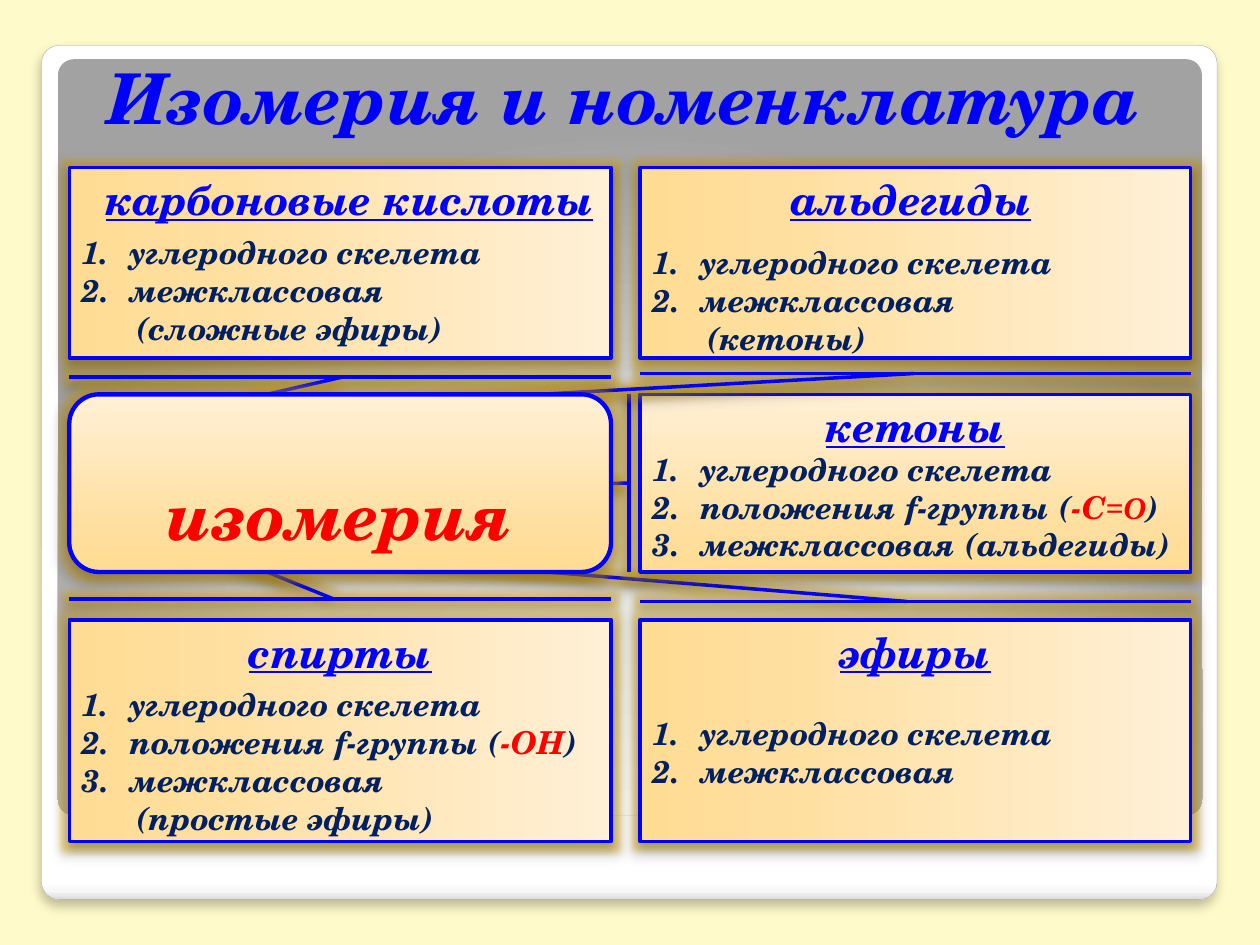
import pptx
import pptx.util
import pptx.dml.color
import pptx.enum.shapes
import pptx.enum.text
import pptx.oxml
import pptx.oxml.ns
import lxml.etree

COLORS = {"page": "FEFAC9", "blue": "0000FF", "navy": "002060", "red": "FF0000",
          "rim": "A4A4A4", "halo": "D8A000", "shade": "000000"}
CREAM = [(0, "FFDC94"), (25, "FFDF9F"), (100, "FFF0D6")]
WHITE = [(0, "FFFFFF"), (98, "FFFFFF"), (99, "F7F7F7"), (100, "DADADA")]
GREY = [(0, "FFFFFF"), (55, "E1E1E1"), (100, "A2A2A2")]
RADIAL = '<a:path path="circle"><a:fillToRect l="50000" t="175000" r="50000" b="-75000"/></a:path>'
FONT = "TeX Gyre Schola"
SHAPES = pptx.enum.shapes.MSO_SHAPE
CENTER = pptx.enum.text.PP_ALIGN.CENTER
MIDDLE = pptx.enum.text.MSO_ANCHOR.MIDDLE
BOTTOM = pptx.enum.text.MSO_ANCHOR.BOTTOM

LEFT, RIGHT = (0.55, 4.3), (5.08, 4.37)
TOP, CORE, BASE = (1.33, 1.51), (3.13, 1.41), (4.92, 1.76)
SKELETON = [("углеродного скелета", "navy")]
INTERCLASS = [("межклассовая", "navy")]

# column, row, turn, callout adjustments, heading, heading width, list top, items, closing line
CLASSES = [
    (LEFT, BASE, 90, (0.512, -0.094, 0.702, -0.283), "спирты", 4.3, 5.39,
     [SKELETON, [("положения f-группы (", "navy"), ("-ОН", "red"), (")", "navy")], INTERCLASS],
     "(простые эфиры)"),
    (RIGHT, BASE, 90, (0.516, -0.083, 1.415, -0.266), "эфиры", 4.37, 5.62,
     [SKELETON, INTERCLASS], None),
    (RIGHT, CORE, 0, (0.499, -0.02, 0.507, -0.102), "кетоны", 4.37, 3.52,
     [SKELETON,
      [("положения f-группы (", "navy"), ("-С", "red"), ("=О", "red", "Times New Roman"), (")", "navy")],
      [("межклассовая (альдегиды)", "navy")]], None),
    (RIGHT, TOP, 270, (0.503, -0.083, 1.448, -0.235), "альдегиды", 4.3, 1.88,
     [SKELETON, INTERCLASS], "(кетоны)"),
    (LEFT, TOP, 270, (0.495, -0.101, 0.77, -0.28), "карбоновые кислоты", 4.45, 1.8,
     [SKELETON, INTERCLASS], "(сложные эфиры)"),
]


def inches(*lengths):
    """Convert lengths to inches."""
    return [pptx.util.Inches(length) for length in lengths]


def rgb(name):
    """Look up a palette colour."""
    return pptx.dml.color.RGBColor.from_string(COLORS[name])


def insert_xml(shape, xml):
    """Put a drawing element into the shape properties, fills before the line."""
    element = pptx.oxml.parse_xml(xml.replace(">", f" {pptx.oxml.ns.nsdecls('a')}>", 1))
    properties = shape.element.spPr
    outline = properties.find(pptx.oxml.ns.qn("a:ln"))
    if element.tag == pptx.oxml.ns.qn("a:gradFill") and outline is not None:
        outline.addprevious(element)
    else:
        properties.append(element)


def add_panel(slide, kind, box, stops, direction, line=None, width=0, adjustments=()):
    """Add a gradient shape with an optional outline."""
    panel = slide.shapes.add_shape(kind, *inches(*box))
    for index, value in enumerate(adjustments):
        panel.adjustments[index] = value
    if line:
        panel.line.color.rgb = rgb(line)
        panel.line.width = pptx.util.Pt(width)
    else:
        panel.line.fill.background()
    colors = "".join(f'<a:gs pos="{pos * 1000}"><a:srgbClr val="{color}"/></a:gs>' for pos, color in stops)
    insert_xml(panel, f'<a:gradFill rotWithShape="1"><a:gsLst>{colors}</a:gsLst>{direction}</a:gradFill>')
    return panel


def linear(angle):
    """Describe a linear gradient direction."""
    return f'<a:lin ang="{angle * 60000}" scaled="0"/>'


def add_effects(shape, alpha, blur, distance, halo=False):
    """Give a shape a downward shadow and an optional golden halo."""
    glow = (f'<a:glow rad="101600"><a:srgbClr val="{COLORS["halo"]}"><a:alpha val="40000"/>'
            '</a:srgbClr></a:glow>') if halo else ""
    insert_xml(shape, f'<a:effectLst>{glow}<a:outerShdw blurRad="{int(blur * 12700)}" '
                      f'dist="{distance * 12700}" dir="5400000" algn="t" rotWithShape="0">'
                      f'<a:srgbClr val="{COLORS["shade"]}"><a:alpha val="{alpha * 1000}"/>'
                      '</a:srgbClr></a:outerShdw></a:effectLst>')


def add_run(paragraph, text, size, color, font=FONT):
    """Add a bold italic run."""
    run = paragraph.add_run()
    run.text = text
    run.font.size = pptx.util.Pt(size)
    run.font.name = font
    run.font.bold = run.font.italic = True
    run.font.color.rgb = rgb(color)
    return run


def add_callout(slide, column, row, turn, adjustments):
    """Add a class box whose leader points at the central box."""
    (left, width), (top, height) = column, row
    if turn:
        left, top = left + (width - height) / 2, top + (height - width) / 2
        width, height = height, width
    callout = add_panel(slide, SHAPES.LINE_CALLOUT_1_BORDER_AND_ACCENT_BAR, (left, top, width, height),
                        CREAM, linear(270), "blue", 2, adjustments)
    callout.rotation = turn
    if turn == 270:
        callout.element.spPr.xfrm.set("flipV", "1")
    add_effects(callout, 40, 5.2, 3, True)


def add_text_frame(slide, box):
    """Add a wrapping text box and return its frame."""
    frame = slide.shapes.add_textbox(*inches(*box)).text_frame
    frame.word_wrap = True
    return frame


def add_heading(slide, text, box):
    """Add an underlined class heading."""
    paragraph = add_text_frame(slide, box).paragraphs[0]
    paragraph.alignment = CENTER
    add_run(paragraph, text, 24, "blue").font.underline = True


def add_isomer_list(slide, box, items, closing):
    """Add a numbered list with an optional unnumbered closing line."""
    frame = add_text_frame(slide, box)
    lines = items + ([[(closing, "navy")]] if closing else [])
    for index, line in enumerate(lines):
        paragraph = frame.paragraphs[0] if index == 0 else frame.add_paragraph()
        numbered = index < len(items)
        properties = paragraph._p.get_or_add_pPr()
        properties.set("marL", str(pptx.util.Inches(0.38 if numbered else 0.43)))
        properties.set("indent", str(pptx.util.Inches(-0.38 if numbered else 0)))
        if numbered:
            bullet = lxml.etree.SubElement(properties, pptx.oxml.ns.qn("a:buAutoNum"))
            bullet.set("type", "arabicPeriod")
        for text, color, *font in line:
            add_run(paragraph, text, 18, color, *font)


def add_title(slide, text):
    """Place and format the slide title in front of the panels."""
    title = slide.shapes.title
    title.element.getparent().append(title.element)
    title.left, title.top, title.width, title.height = inches(0.47, 0.31, 8.95, 0.84)
    title.text_frame.vertical_anchor = BOTTOM
    paragraph = title.text_frame.paragraphs[0]
    paragraph.alignment = CENTER
    add_run(paragraph, text, 40, "blue")


def add_core(slide, text):
    """Add the central topic box."""
    core = add_panel(slide, SHAPES.ROUNDED_RECTANGLE, (LEFT[0], CORE[0], LEFT[1], CORE[1]),
                     CREAM, linear(270), "blue", 2.5)
    add_effects(core, 40, 5.2, 3, True)
    core.text_frame.vertical_anchor = MIDDLE
    paragraph = core.text_frame.paragraphs[0]
    paragraph.alignment = CENTER
    add_run(paragraph, text, 66, "red").font._element.set("baseline", "-10000")


def main():
    """Build the isomerism slide."""
    deck = pptx.Presentation()
    deck.slide_width, deck.slide_height = inches(10, 7.5)
    slide = deck.slides.add_slide(deck.slide_layouts[5])
    slide.background.fill.solid()
    slide.background.fill.fore_color.rgb = rgb("page")
    card = add_panel(slide, SHAPES.ROUNDED_RECTANGLE, (0.33, 0.36, 9.33, 6.78), WHITE, linear(90),
                     "rim", 0.16, [0.021])
    add_effects(card, 25, 6, 4)
    backdrop = add_panel(slide, SHAPES.ROUNDED_RECTANGLE, (0.46, 0.47, 9.08, 6), GREY, RADIAL,
                         adjustments=[0.021])
    backdrop.shadow.inherit = False
    for column, row, turn, adjustments, heading, width, list_top, items, closing in CLASSES:
        add_callout(slide, column, row, turn, adjustments)
        add_heading(slide, heading, (column[0], row[0], width, 0.5))
        add_isomer_list(slide, (column[0], list_top, 4.38, 0.11 + 0.3 * (len(items) + bool(closing))),
                        items, closing)
    add_title(slide, "Изомерия и номенклатура")
    add_core(slide, "изомерия")
    deck.save("out.pptx")


if __name__ == "__main__":
    main()
